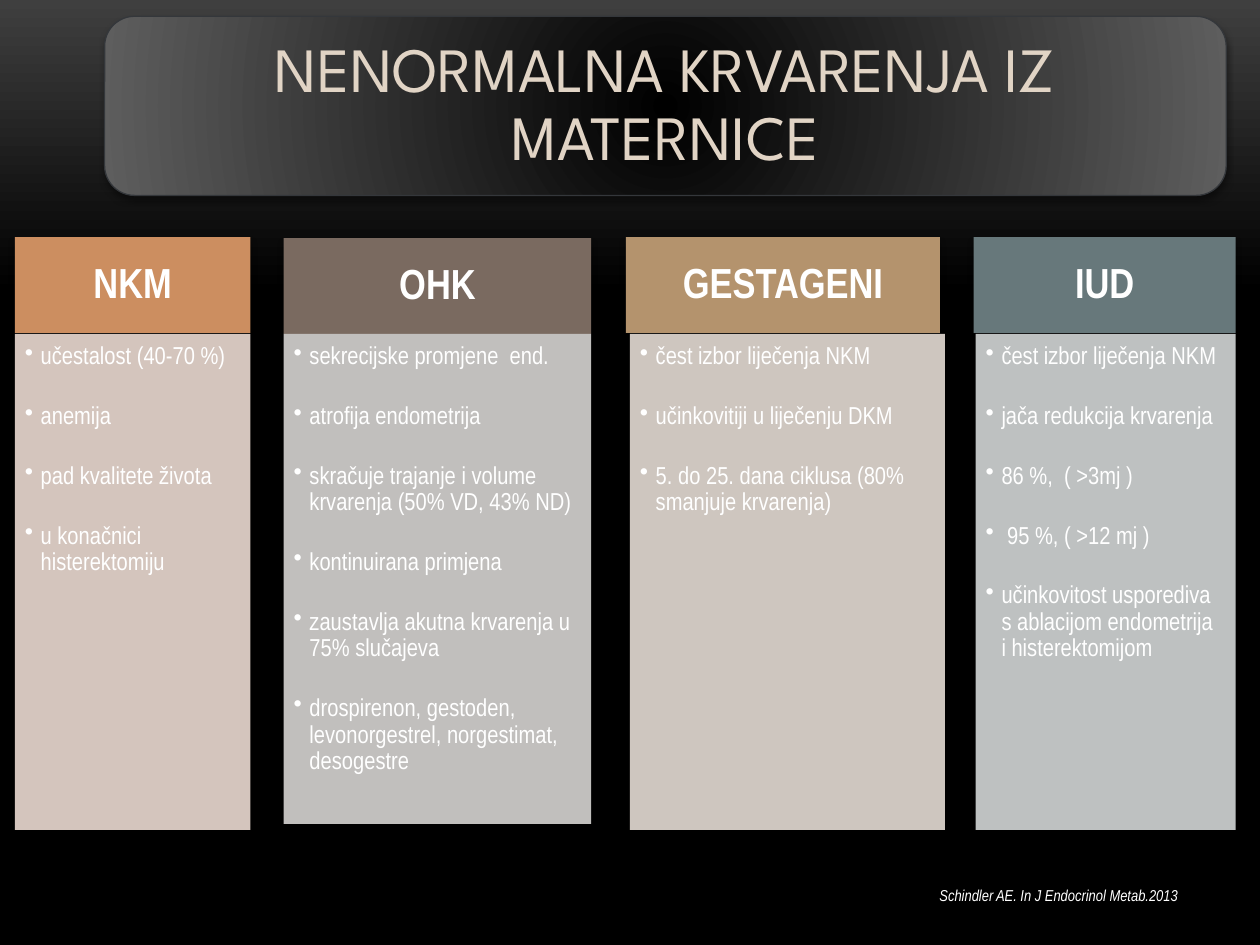
from dataclasses import dataclass
from lxml import etree
from pptx import Presentation
from pptx import util as u
from pptx.dml import color
from pptx.enum import shapes, text
from pptx.oxml import ns, parse_xml


@dataclass(frozen=True)
class Theme:
    heading_font: str = "League Spartan"
    body_font: str = "Arial Narrow"
    title_size: int = 36
    header_size: int = 24
    item_size: int = 14
    source_size: int = 9
    title_text: str = "E1D4C5"
    title_line: str = "34373B"
    white: str = "FFFFFF"
    title_stops: tuple = ((0, "000000"), (100, "5E5E5E"))
    background_stops: tuple = ((0, "3F3F3F"), (31, "000000"), (100, "000000"))


theme = Theme()
rgb = color.RGBColor.from_string
namespace = ns.nsdecls("a")


def set_gradient(owner, fill, stops, direction):
    fill.gradient()
    gradient = owner.find(".//" + ns.qn("a:gradFill"))
    stop_xml = "".join(
        f'<a:gs pos="{position * 1000}"><a:srgbClr val="{value}"/></a:gs>'
        for position, value in stops)
    gradient.getparent().replace(gradient, parse_xml(
        f'<a:gradFill {namespace} rotWithShape="1">'
        f'<a:gsLst>{stop_xml}</a:gsLst>{direction}</a:gradFill>'))


def add_panel(preset, box, insets, anchor, shadow_distance=None):
    panel = slide.shapes.add_shape(preset, *map(u.Cm, box))
    panel.shadow.inherit = False
    panel.line.fill.background()
    if shadow_distance:
        effects = panel.element.spPr.find(ns.qn("a:effectLst"))
        effects.append(parse_xml(
            f'<a:outerShdw {namespace} blurRad="{u.Pt(4)}" dist="{u.Pt(shadow_distance)}" '
            'dir="5400000" rotWithShape="0"><a:srgbClr val="000000">'
            '<a:alpha val="40000"/></a:srgbClr></a:outerShdw>'))
    frame = panel.text_frame
    frame.word_wrap = True
    frame.vertical_anchor = anchor
    frame.margin_left, frame.margin_top, frame.margin_right, frame.margin_bottom = map(u.Cm, insets)
    return panel


presentation = Presentation()
presentation.slide_width, presentation.slide_height = u.Cm(25.4), u.Cm(19.05)
slide = presentation.slides.add_slide(presentation.slide_layouts[6])
set_gradient(slide.element, slide.background.fill, theme.background_stops,
             '<a:lin ang="5400000" scaled="0"/>')

title = add_panel(shapes.MSO_SHAPE.ROUNDED_RECTANGLE, (2.11, 0.33, 22.61, 3.61),
                  (0.38, 0.38, 0.38, 0.38), text.MSO_ANCHOR.MIDDLE, 2)
set_gradient(title.element, title.fill, theme.title_stops,
             '<a:path path="circle"><a:fillToRect l="50000" t="50000" r="50000" b="50000"/></a:path>')
title.line.color.rgb = rgb(theme.title_line)
title.line.width = u.Pt(0.75)
paragraph = title.text_frame.paragraphs[0]
paragraph.alignment = text.PP_ALIGN.CENTER
paragraph.line_spacing = 0.9
run = paragraph.add_run()
run.text = "NENORMALNA KRVARENJA IZ MATERNICE"
run.font.name = theme.heading_font
run.font.size = u.Pt(theme.title_size)
run.font.color.rgb = rgb(theme.title_text)

columns = [
    ("NKM", (0.3, 4.78, 4.75, 1.93), "CC8E60", (0.3, 6.73, 4.75, 10), "ECDBD2",
     ["učestalost (40-70 %)", "anemija", "pad kvalitete života",
      "u konačnici histerektomiju"]),
    ("OHK", (5.72, 4.8, 6.2, 1.93), "7A6A60", (5.72, 6.73, 6.2, 9.88), "D7D4D2",
     ["sekrecijske promjene  end.", "atrofija endometrija",
      "skračuje trajanje i volume krvarenja (50% VD, 43% ND)",
      "kontinuirana primjena", "zaustavlja akutna krvarenja u 75% slučajeva",
      "drospirenon, gestoden, levonorgestrel, norgestimat, desogestre"]),
    ("GESTAGENI", (12.62, 4.78, 6.33, 1.93), "B4936D", (12.7, 6.73, 6.35, 10), "E5DCD4",
     ["čest izbor liječenja NKM", "učinkovitiji u liječenju DKM",
      "5. do 25. dana ciklusa (80% smanjuje krvarenja)"]),
    ("IUD", (19.63, 4.78, 5.28, 1.93), "67787B", (19.67, 6.73, 5.24, 10), "D3D6D7",
     ["čest izbor liječenja NKM", "jača redukcija krvarenja", "86 %,  ( >3mj )",
      " 95 %, ( >12 mj )",
      "učinkovitost usporediva s ablacijom endometrija i histerektomijom"]),
]

for heading, header_box, header_color, list_box, list_color, items in columns:
    header = add_panel(shapes.MSO_SHAPE.RECTANGLE, header_box,
                       (0.48, 0.28, 0.48, 0.28), text.MSO_ANCHOR.MIDDLE, 3.4)
    header.fill.solid()
    header.fill.fore_color.rgb = rgb(header_color)
    paragraph = header.text_frame.paragraphs[0]
    paragraph.alignment = text.PP_ALIGN.CENTER
    paragraph.line_spacing = 0.9
    run = paragraph.add_run()
    run.text = heading
    run.font.name = theme.body_font
    run.font.size = u.Pt(theme.header_size)
    run.font.bold = True
    run.font.color.rgb = rgb(theme.white)

    panel = add_panel(shapes.MSO_SHAPE.RECTANGLE, list_box,
                      (0.2, 0.2, 0.28, 0.3), text.MSO_ANCHOR.TOP)
    panel.fill.solid()
    panel.fill.fore_color.rgb = rgb(list_color)
    fill_color = panel.element.spPr.find(ns.qn("a:solidFill"))[0]
    etree.SubElement(fill_color, ns.qn("a:alpha"), val="90000")
    for index, item in enumerate(items):
        frame = panel.text_frame
        paragraph = frame.add_paragraph() if index else frame.paragraphs[0]
        properties = paragraph._p.get_or_add_pPr()
        properties.set("marL", str(u.Cm(0.32)))
        properties.set("indent", str(-u.Cm(0.32)))
        etree.SubElement(properties, ns.qn("a:buChar"), char="•")
        paragraph.alignment = text.PP_ALIGN.LEFT
        paragraph.line_spacing = 0.9
        paragraph.space_after = u.Pt(19)
        run = paragraph.add_run()
        run.text = item
        run.font.name = theme.body_font
        run.font.size = u.Pt(theme.item_size)
        run.font.color.rgb = rgb(theme.white)

source = slide.shapes.add_textbox(u.Cm(18.69), u.Cm(17.73), u.Cm(5.44), u.Cm(0.64))
source.text_frame.word_wrap = False
source.text_frame.auto_size = text.MSO_AUTO_SIZE.SHAPE_TO_FIT_TEXT
run = source.text_frame.paragraphs[0].add_run()
run.text = "Schindler AE. In J Endocrinol Metab.2013"
run.font.name = theme.body_font
run.font.size = u.Pt(theme.source_size)
run.font.italic = True
run.font.color.rgb = rgb(theme.white)

presentation.save("out.pptx")
